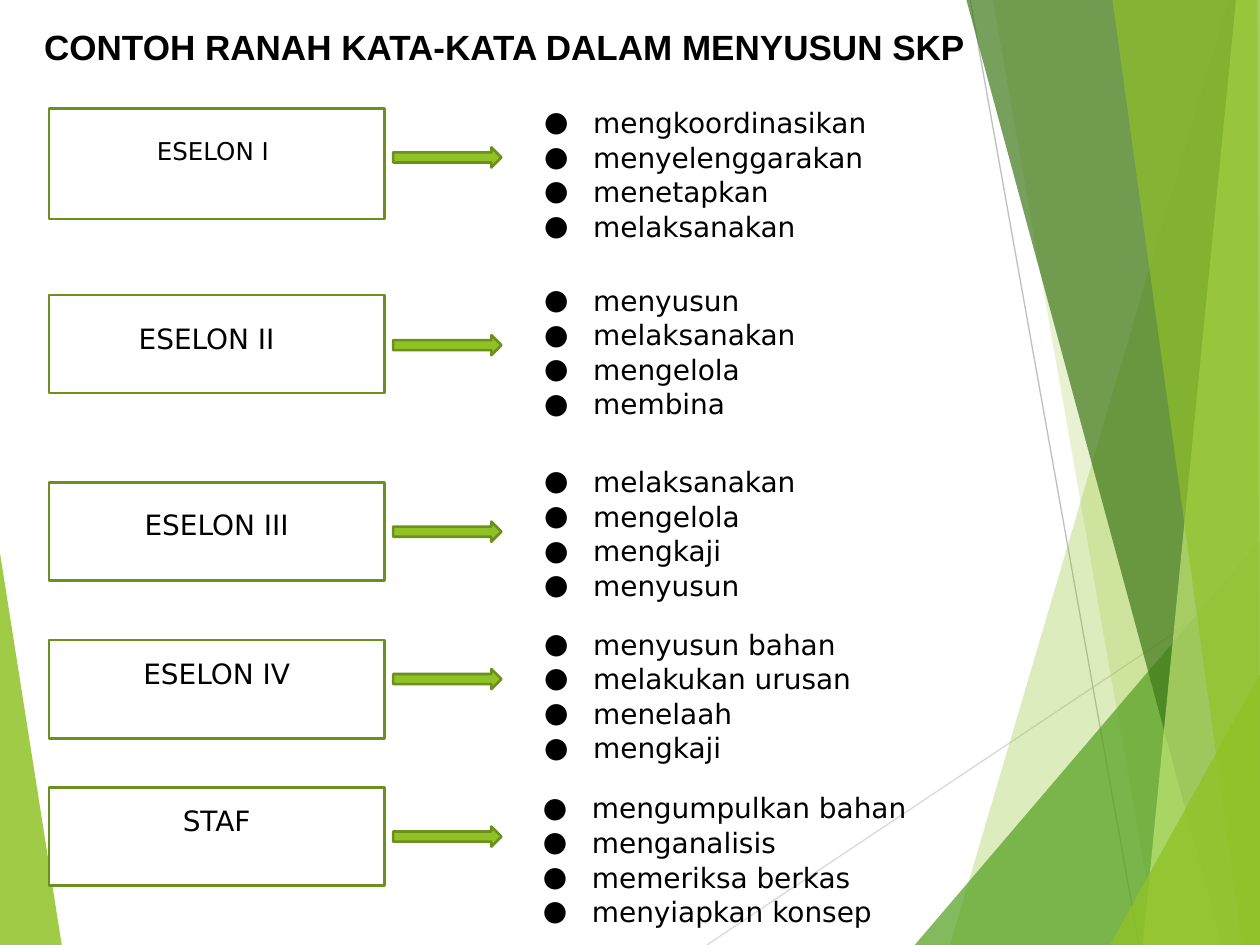
from dataclasses import dataclass

from lxml import etree
from pptx import Presentation
from pptx.dml.color import RGBColor
from pptx.enum.shapes import MSO_CONNECTOR, MSO_SHAPE
from pptx.enum.text import MSO_ANCHOR, PP_ALIGN
from pptx.oxml.ns import qn
from pptx.util import Inches, Pt

RECTANGLE, RIGHT_ARROW = MSO_SHAPE.RECTANGLE, MSO_SHAPE.RIGHT_ARROW
STRAIGHT = MSO_CONNECTOR.STRAIGHT
LEFT, CENTER, JUSTIFY = PP_ALIGN.LEFT, PP_ALIGN.CENTER, PP_ALIGN.JUSTIFY
TOP, MIDDLE = MSO_ANCHOR.TOP, MSO_ANCHOR.MIDDLE

W, H = 10, 7.5
GREEN, DARK_GREEN, WHITE, BLACK = "90C226", "6B901C", "FFFFFF", "000000"
BOX_LEFT, BOX_WIDTH = 0.39, 2.66
LABEL_WIDTH = 2.5
ARROW_LEFT, ARROW_WIDTH, ARROW_HEIGHT = 3.12, 0.86, 0.16
VERBS_WIDTH, VERBS_HEIGHT, INDENT = 3.67, 1.18, 0.39

# Corner points, colour and opacity in percent, from back to front
LEFT_WEDGE = ([(0, 4.39), (0.49, H), (0, H)], GREEN, 85)
RIGHT_FACETS = [
    ([(9.75, 0), (7.54, H), (W, H), (W, 0)], GREEN, 30),
    ([(7.88, 0), (9.19, H), (W, H), (W, 0)], GREEN, 20),
    ([(7.26, H), (W, 4.29), (W, H)], "54A021", 72),
    ([(7.67, 0), (9.7, H), (W, H), (W, 0)], "3F7819", 70),
    ([(9.81, 0), (9.07, H), (W, H), (W, 0)], "C0E474", 70),
    ([(8.83, 0), (9.86, H), (W, H), (9.98, 0)], GREEN, 65),
    ([(8.81, H), (W, 5.35), (W, H)], GREEN, 80),
]
HAIRLINES = [((5.61, H), (W, 4.57), "D9D9D9"), ((7.7, 0), (9.04, H), "BFBFBF")]


@dataclass
class Echelon:
    name: str
    verbs: list
    top: float
    label_left: float
    label_top: float
    arrow_top: float
    verbs_top: float
    height: float = 0.78
    size: int = 16
    verbs_left: float = 4.22


ECHELONS = [
    Echelon("ESELON I", ["mengkoordinasikan", "menyelenggarakan", "menetapkan", "melaksanakan"],
            0.86, 0.44, 1.03, 1.17, 0.78, height=0.88, size=14),
    Echelon("ESELON II", ["menyusun", "melaksanakan", "mengelola", "membina"],
            2.34, 0.39, 2.5, 2.66, 2.19),
    Echelon("ESELON III", ["melaksanakan", "mengelola", "mengkaji", "menyusun"],
            3.83, 0.47, 3.98, 4.14, 3.63),
    Echelon("ESELON IV", ["menyusun bahan", "melakukan urusan", "menelaah", "mengkaji"],
            5.08, 0.47, 5.16, 5.31, 4.92),
    Echelon("STAF", ["mengumpulkan bahan", "menganalisis", "memeriksa berkas",
                     "menyiapkan konsep"],
            6.25, 0.47, 6.33, 6.56, 6.22, verbs_left=4.21),
]


def color(hex_code):
    return RGBColor.from_string(hex_code)


def inches(*lengths):
    return [Inches(length) for length in lengths]


def add_bullet(paragraph):
    props = paragraph._p.get_or_add_pPr()
    props.set("marL", str(Inches(INDENT)))
    props.set("indent", str(-Inches(INDENT)))
    etree.SubElement(props, qn("a:buFont")).set("typeface", "DejaVu Sans")
    etree.SubElement(props, qn("a:buChar")).set("char", "●")


def write(frame, lines, size=16, font="DejaVu Sans", bold=False, align=LEFT,
          anchor=TOP, bullets=False, spacing=1.0):
    frame.word_wrap = True
    frame.vertical_anchor = anchor
    for index, line in enumerate(lines):
        paragraph = frame.add_paragraph() if index else frame.paragraphs[0]
        paragraph.alignment = align
        paragraph.line_spacing = spacing
        if bullets:
            add_bullet(paragraph)
        run = paragraph.add_run()
        run.text = line
        run.font.size, run.font.name, run.font.bold = Pt(size), font, bold
        run.font.color.rgb = color(BLACK)


def add_text(slide, box, lines, **text_format):
    write(slide.shapes.add_textbox(*inches(*box)).text_frame, lines, **text_format)


def add_outlined(slide, preset, box, fill):
    shape = slide.shapes.add_shape(preset, *inches(*box))
    shape.shadow.inherit = False
    shape.fill.solid()
    shape.fill.fore_color.rgb = color(fill)
    shape.line.color.rgb = color(DARK_GREEN)
    shape.line.width = Pt(1.5)


def add_facet(slide, points, fill, opacity):
    start, *rest = [inches(*point) for point in points]
    builder = slide.shapes.build_freeform(*start)
    builder.add_line_segments(rest, close=True)
    facet = builder.convert_to_shape()
    facet.shadow.inherit = False
    facet.fill.solid()
    facet.fill.fore_color.rgb = color(fill)
    facet.line.fill.background()
    tint = facet._element.spPr.find(qn("a:solidFill"))[0]
    etree.SubElement(tint, qn("a:alpha")).set("val", str(opacity * 1000))


def add_hairline(slide, start, end, stroke):
    line = slide.shapes.add_connector(STRAIGHT, *inches(*start, *end))
    line.line.color.rgb = color(stroke)
    line.line.width = Pt(0.75)
    etree.SubElement(line._element.spPr, qn("a:effectLst"))


def add_backdrop(slide):
    add_facet(slide, *LEFT_WEDGE)
    for hairline in HAIRLINES:
        add_hairline(slide, *hairline)
    for facet in RIGHT_FACETS:
        add_facet(slide, *facet)


def add_title(slide, box):
    title = slide.shapes.title
    title.left, title.top, title.width, title.height = inches(*box)
    write(title.text_frame, ["CONTOH RANAH KATA-KATA DALAM MENYUSUN SKP"],
          size=20, font="Arial", bold=True, align=JUSTIFY, anchor=MIDDLE)


def add_echelon(slide, row):
    """Place one level: its box and label, the arrow, and its verbs."""
    add_outlined(slide, RECTANGLE, (BOX_LEFT, row.top, BOX_WIDTH, row.height), WHITE)
    add_text(slide, (row.label_left, row.label_top, LABEL_WIDTH, 0.37), [row.name],
             size=row.size, align=CENTER)
    add_outlined(slide, RIGHT_ARROW,
                 (ARROW_LEFT, row.arrow_top, ARROW_WIDTH, ARROW_HEIGHT), GREEN)
    add_text(slide, (row.verbs_left, row.verbs_top, VERBS_WIDTH, VERBS_HEIGHT),
             row.verbs, bullets=True, spacing=1.03)


def main():
    deck = Presentation()
    deck.slide_width, deck.slide_height = inches(W, H)
    slide = deck.slides.add_slide(deck.slide_layouts.get_by_name("Title Only"))
    add_backdrop(slide)
    for row in ECHELONS:
        add_echelon(slide, row)
    add_title(slide, (0.25, 0.1, 8.82, 0.54))
    deck.save("out.pptx")


if __name__ == "__main__":
    main()
